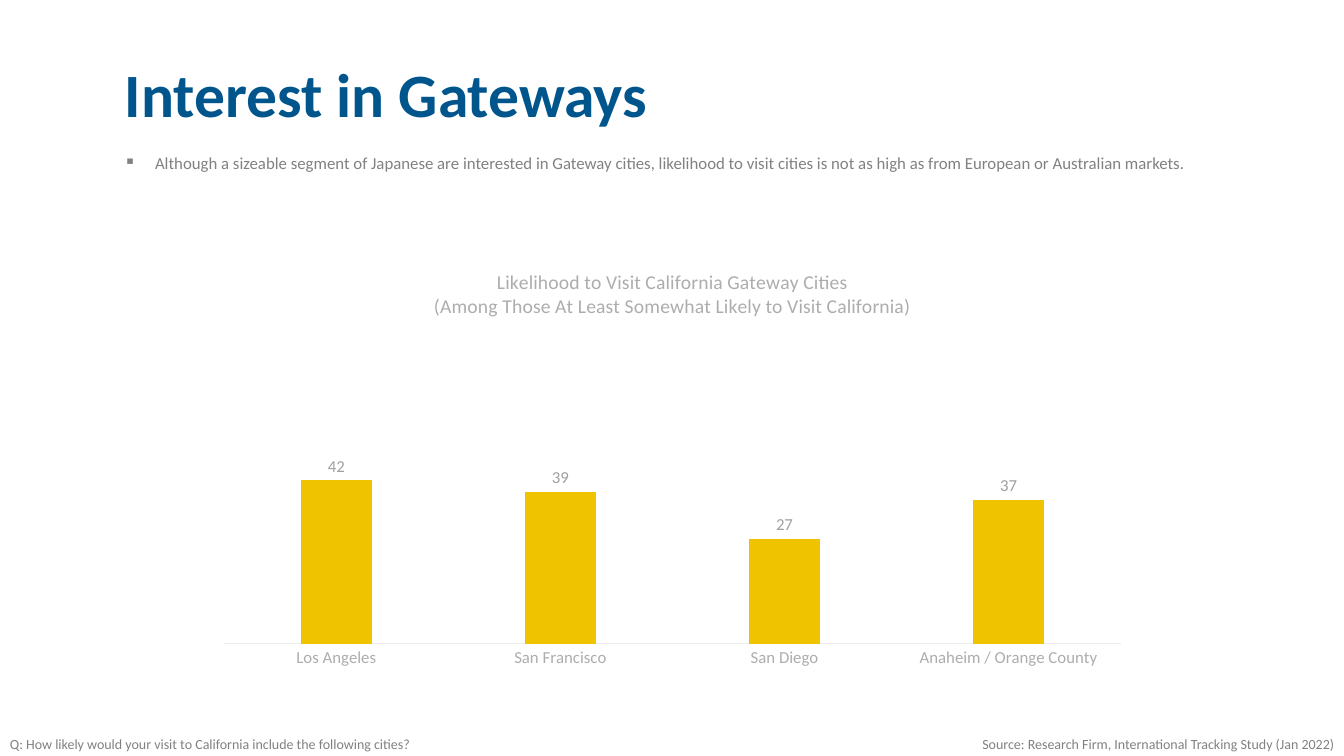
from lxml import etree
from pptx import Presentation
from pptx import util as u
from pptx.chart.data import CategoryChartData
from pptx.dml.color import RGBColor
from pptx.enum import chart as ch, text
from pptx.oxml.ns import qn

BLUE, GOLD, WHITE = "00558C", "F0C300", "FFFFFF"
GRAY, LIGHT_GRAY, LABEL_GRAY, AXIS_GRAY = "808180", "ACADAC", "A0A0A0", "ECECEC"


def color(value):
    return RGBColor.from_string(value)


class SlideBuilder:
    font_name = "Calibri"

    def __init__(self, slide):
        self.slide = slide
        slide.background.fill.solid()
        slide.background.fill.fore_color.rgb = color(WHITE)

    def style(self, font, size, tint, bold=False):
        font.name = self.font_name
        font.size = u.Pt(size)
        font.color.rgb = color(tint)
        font.bold = bold

    def text(self, words, box, size, tint=GRAY, bold=False, align=text.PP_ALIGN.LEFT):
        """Add a one-paragraph text box and return its paragraph."""
        frame = self.slide.shapes.add_textbox(*map(u.Inches, box)).text_frame
        frame.word_wrap = True
        paragraph = frame.paragraphs[0]
        paragraph.text = words
        paragraph.alignment = align
        self.style(paragraph.font, size, tint, bold)
        return paragraph

    def bullet(self, words, box, size):
        properties = self.text(words, box, size)._p.get_or_add_pPr()
        indent = u.Inches(0.31)
        properties.set("marL", str(indent))
        properties.set("indent", str(-indent))
        mark = etree.Element(qn("a:buChar"), char="▪")
        properties.insert(0, mark)

    def column_chart(self, title_lines, values, box, maximum, step):
        data = CategoryChartData(number_format="0")
        data.categories = list(values)
        data.add_series("Series 1", list(values.values()))
        chart = self.slide.shapes.add_chart(
            ch.XL_CHART_TYPE.COLUMN_CLUSTERED, *map(u.Inches, box), data).chart
        self.style(chart.font, 10, GRAY)
        chart.has_legend = False

        heading = chart.chart_title.text_frame
        heading.text = "\n".join(title_lines)
        for paragraph in heading.paragraphs:
            self.style(paragraph.font, 14, LIGHT_GRAY)
        chart.chart_title.include_in_layout = False

        cities, scale = chart.category_axis, chart.value_axis
        for axis in (cities, scale):
            axis.major_tick_mark = axis.minor_tick_mark = ch.XL_TICK_MARK.NONE
            axis.has_major_gridlines = False
            self.style(axis.tick_labels.font, 12, LIGHT_GRAY)
        cities.format.line.color.rgb = color(AXIS_GRAY)
        cities.format.line.width = u.Pt(0.75)
        scale.format.line.fill.background()
        scale.tick_label_position = ch.XL_TICK_LABEL_POSITION.NONE
        scale.minimum_scale, scale.maximum_scale = 0, maximum
        scale.major_unit = step

        columns = chart.plots[0]
        columns.gap_width, columns.overlap = 219, -27
        columns.vary_by_categories = False
        series = columns.series[0]
        series.format.fill.solid()
        series.format.fill.fore_color.rgb = color(GOLD)
        labels = series.data_labels
        labels.show_value = True
        labels.number_format, labels.number_format_is_linked = "0", False
        labels.position = ch.XL_LABEL_POSITION.OUTSIDE_END
        self.style(labels.font, 12, LABEL_GRAY)


def main():
    deck = Presentation()
    deck.slide_width, deck.slide_height = u.Inches(13.33), u.Inches(7.5)
    page = SlideBuilder(deck.slides.add_slide(deck.slide_layouts[6]))

    title = page.text("Interest in Gateways", (1.14, 0.54, 11.06, 0.9), 44, BLUE, bold=True)
    title.line_spacing = u.Pt(50)
    title.space_before = u.Pt(10)
    page.bullet(
        "Although a sizeable segment of Japanese are interested in Gateway cities, "
        "likelihood to visit cities is not as high as from European or Australian markets.",
        (1.13, 1.47, 11.36, 0.71), 12)
    page.column_chart(
        ("Likelihood to Visit California Gateway Cities",
         "(Among Those At Least Somewhat Likely to Visit California)"),
        {"Los Angeles": 42, "San Francisco": 39, "San Diego": 27, "Anaheim / Orange County": 37},
        (2.04, 2.5, 9.26, 4.21), maximum=80, step=20)
    page.text("Q: How likely would your visit to California include the following cities?",
              (0, 7.25, 4.85, 0.27), 10)
    page.text("Source: Research Firm, International Tracking Study (Jan 2022)",
              (7.4, 7.25, 5.93, 0.27), 10, align=text.PP_ALIGN.RIGHT)
    deck.save("out.pptx")


if __name__ == "__main__":
    main()
